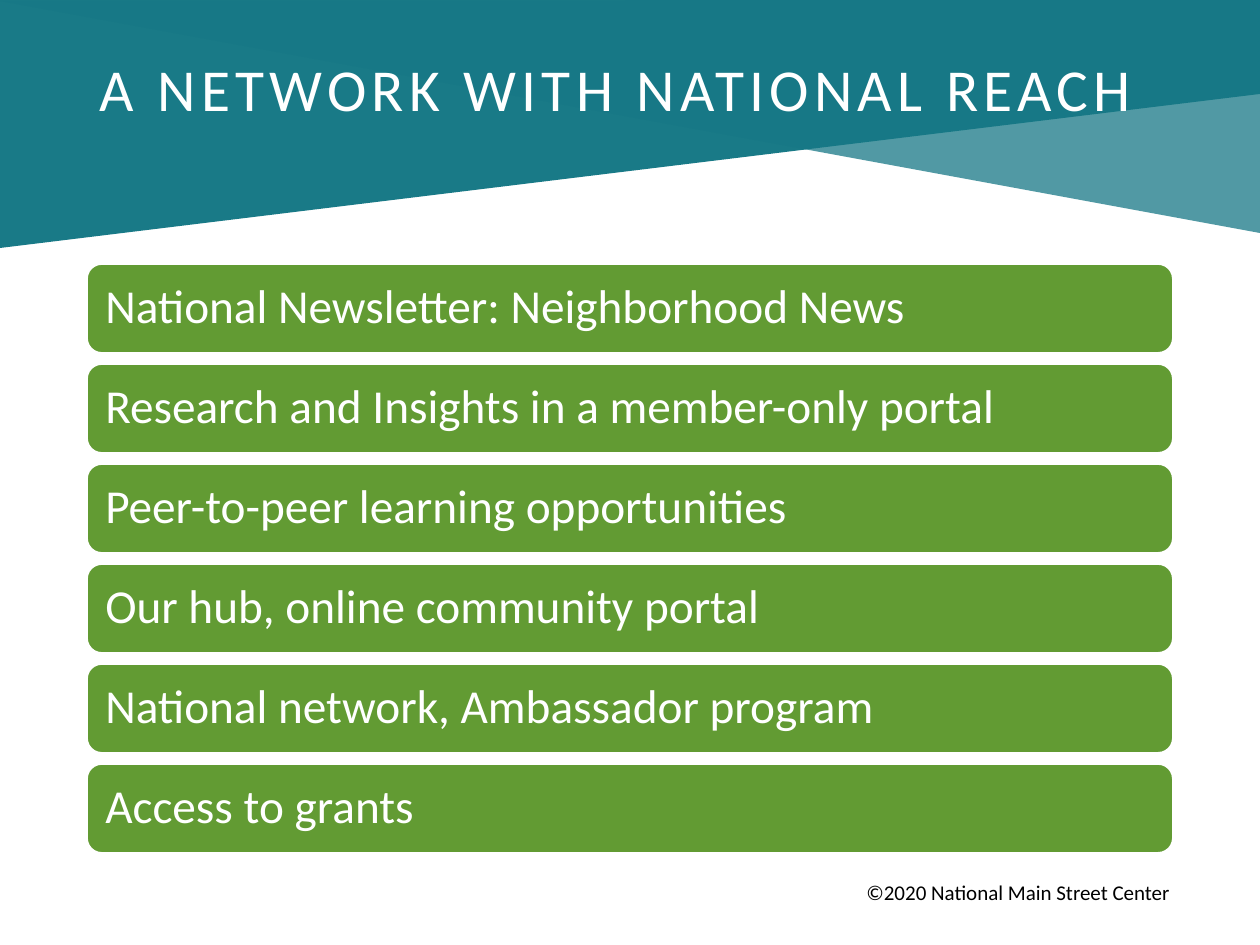
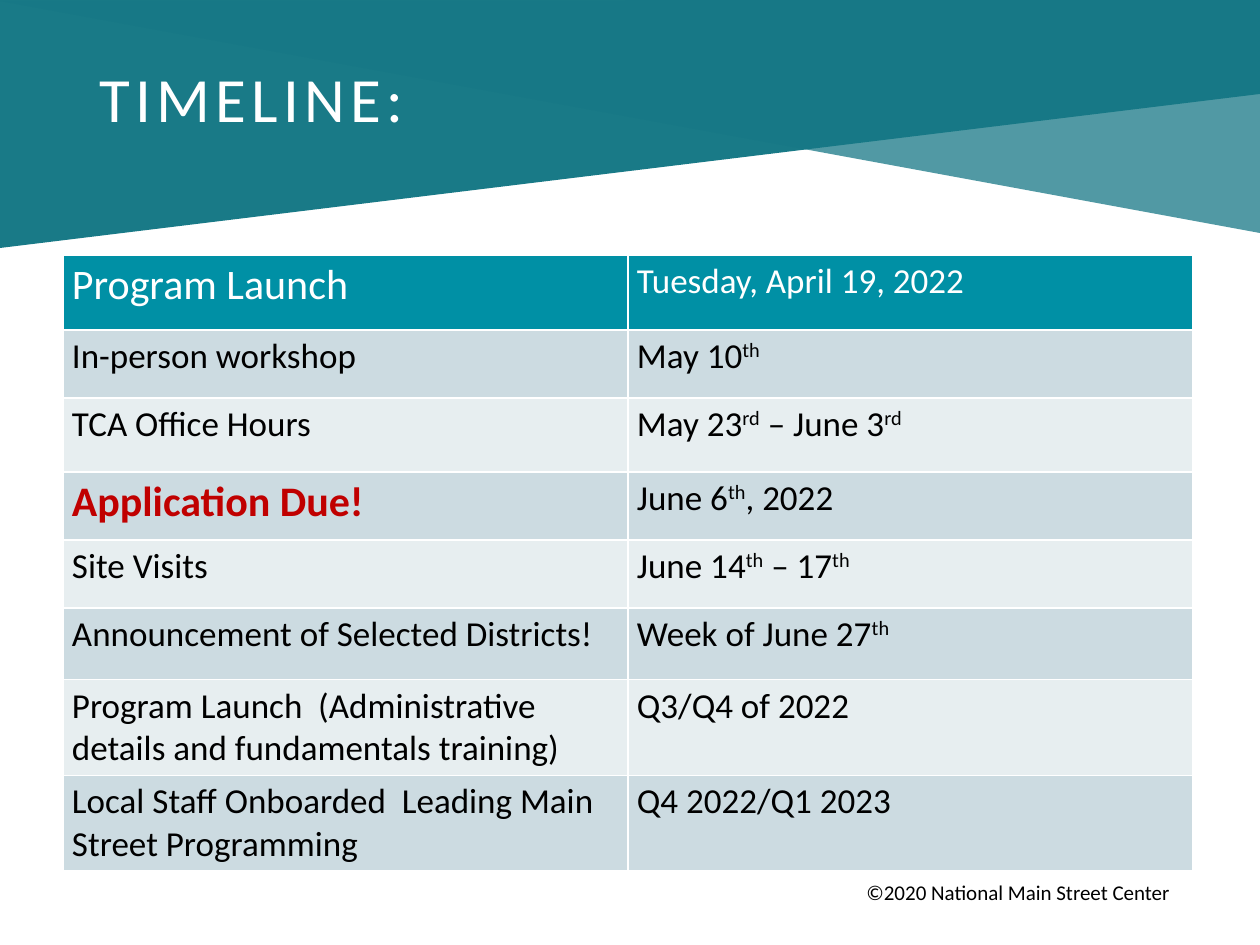
"""Build two slides: a list of network benefits and a programme timeline."""
from dataclasses import dataclass

from lxml import etree
from pptx import Presentation
from pptx import util as u
from pptx.dml.color import RGBColor
from pptx.enum import shapes, text
from pptx.oxml.ns import qn

PX = 914400 / 126


@dataclass(frozen=True)
class Theme:
    font: str = "Calibri"
    white: str = "FFFFFF"
    ink: str = "000000"
    alert: str = "C00000"
    bar: str = "629B33"
    header: str = "0090A5"
    stripes: tuple = ("E7EEF0", "CCDBE1")
    tracking: int = 300
    bar_size: int = 27
    cell_size: int = 20
    lead_size: int = 24
    footer_size: int = 12


THEME = Theme()

BANDS = [
    ("006C7B", 90, [(0, 0), (1260, 0), (1260, 94), (0, 248)]),
    ("177886", 75, [(0, 1), (1260, 0), (1260, 233)]),
]
FOOTER = "©2020 National Main Street Center"
REACH = {"title": "A NETWORK WITH NATIONAL REACH", "size": 34, "top": 47}
TIMELINE = {"title": "TIMELINE:", "size": 36, "top": 57}
BENEFITS = [
    "National Newsletter: Neighborhood News",
    "Research and Insights in a member-only portal",
    "Peer-to-peer learning opportunities",
    "Our hub, online community portal",
    "National network, Ambassador program",
    "Access to grants",
]
MILESTONES = [
    (75, "Program Launch", "Tuesday, April 19, 2022"),
    (68, "In-person workshop", "May 10^th"),
    (74, "TCA Office Hours", "May 23^rd^ – June 3^rd"),
    (68, "Application Due!", "June 6^th^, 2022"),
    (68, "Site Visits", "June 14^th^ – 17^th"),
    (72, "Announcement of Selected Districts!", "Week of June 27^th"),
    (86, "Program Launch  (Administrative details and fundamentals training)", "Q3/Q4 of 2022"),
    (86, "Local Staff Onboarded  Leading Main Street Programming", "Q4 2022/Q1 2023"),
]
DEADLINE = "Application Due!"


def px(*lengths):
    return [u.Emu(round(length * PX)) for length in lengths]


def paint(fill, color):
    fill.solid()
    fill.fore_color.rgb = RGBColor.from_string(color)


def style(paragraph, size, color, bold=False):
    font = paragraph.font
    font.name, font.size, font.bold = THEME.font, u.Pt(size), bold
    font.color.rgb = RGBColor.from_string(color)


def add_band(slide, color, opacity, corners):
    builder = slide.shapes.build_freeform(*corners[0], scale=PX)
    builder.add_line_segments(corners[1:], close=True)
    band = builder.convert_to_shape()
    band.shadow.inherit = False
    band.line.fill.background()
    paint(band.fill, color)
    tint = band.fill._xPr.find(".//" + qn("a:srgbClr"))
    etree.SubElement(tint, qn("a:alpha"), val=str(opacity * 1000))


def add_framed_slide(deck, heading):
    slide = deck.slides.add_slide(deck.slide_layouts[5])
    for band in BANDS:
        add_band(slide, *band)

    footer = slide.shapes.add_textbox(*px(854, 873, 338, 38)).text_frame
    footer.word_wrap = True
    footer.text = FOOTER
    style(footer.paragraphs[0], THEME.footer_size, THEME.ink)

    title = slide.shapes.title
    slide.shapes._spTree.append(title._element)
    title.left, title.top, title.width, title.height = px(87, heading["top"], 1086, 91)
    frame = title.text_frame
    frame.text = heading["title"]
    frame.word_wrap = True
    frame.auto_size = text.MSO_AUTO_SIZE.NONE
    frame.vertical_anchor = text.MSO_ANCHOR.MIDDLE
    line = frame.paragraphs[0]
    line.alignment, line.line_spacing = text.PP_ALIGN.LEFT, 0.9
    style(line, heading["size"], THEME.white)
    line.runs[0]._r.get_or_add_rPr().set("spc", str(THEME.tracking))
    return slide


def add_benefit(slide, index, benefit):
    bar = slide.shapes.add_shape(
        shapes.MSO_SHAPE.ROUNDED_RECTANGLE, *px(87, 264 + 100 * index, 1086, 89))
    bar.shadow.inherit = False
    paint(bar.fill, THEME.bar)
    paint(bar.line.fill, THEME.white)
    bar.line.width = u.Pt(1)
    frame = bar.text_frame
    frame.word_wrap = True
    frame.vertical_anchor = text.MSO_ANCHOR.MIDDLE
    frame.margin_left, frame.margin_right = px(14, 14)
    frame.text = benefit
    line = frame.paragraphs[0]
    line.alignment, line.line_spacing = text.PP_ALIGN.LEFT, 0.9
    style(line, THEME.bar_size, THEME.white)


def add_borders(cell):
    properties = cell._tc.get_or_add_tcPr()
    for side in ("a:lnL", "a:lnR", "a:lnT", "a:lnB"):
        edge = etree.SubElement(properties, qn(side), w=str(u.Pt(1)))
        fill = etree.SubElement(edge, qn("a:solidFill"))
        etree.SubElement(fill, qn("a:srgbClr"), val=THEME.white)


def fill_cell(cell, entry, fill, size, color, bold):
    add_borders(cell)
    paint(cell.fill, fill)
    cell.margin_left, cell.margin_right, cell.margin_top, cell.margin_bottom = px(9, 9, 5, 5)
    line = cell.text_frame.paragraphs[0]
    for position, part in enumerate(entry.split("^")):
        run = line.add_run()
        run.text = part
        if position % 2:
            run._r.get_or_add_rPr().set("baseline", "30000")
    style(line, size, color, bold)


def add_timeline(slide):
    height = sum(row[0] for row in MILESTONES)
    table = slide.shapes.add_table(len(MILESTONES), 2, *px(63, 255, 1130, height)).table
    table.first_row = table.horz_banding = False
    for index, (row_height, event, date) in enumerate(MILESTONES):
        table.rows[index].height = px(row_height)[0]
        launch, due = index == 0, event == DEADLINE
        fill = THEME.header if launch else THEME.stripes[index % 2]
        color = THEME.white if launch else THEME.ink
        event_size = THEME.lead_size if launch or due else THEME.cell_size
        event_color = THEME.alert if due else color
        fill_cell(table.cell(index, 0), event, fill, event_size, event_color, due)
        fill_cell(table.cell(index, 1), date, fill, THEME.cell_size, color, False)


def main():
    deck = Presentation()
    deck.slide_width, deck.slide_height = px(1260, 945)
    reach = add_framed_slide(deck, REACH)
    for index, benefit in enumerate(BENEFITS):
        add_benefit(reach, index, benefit)
    add_timeline(add_framed_slide(deck, TIMELINE))
    deck.save("out.pptx")


if __name__ == "__main__":
    main()
